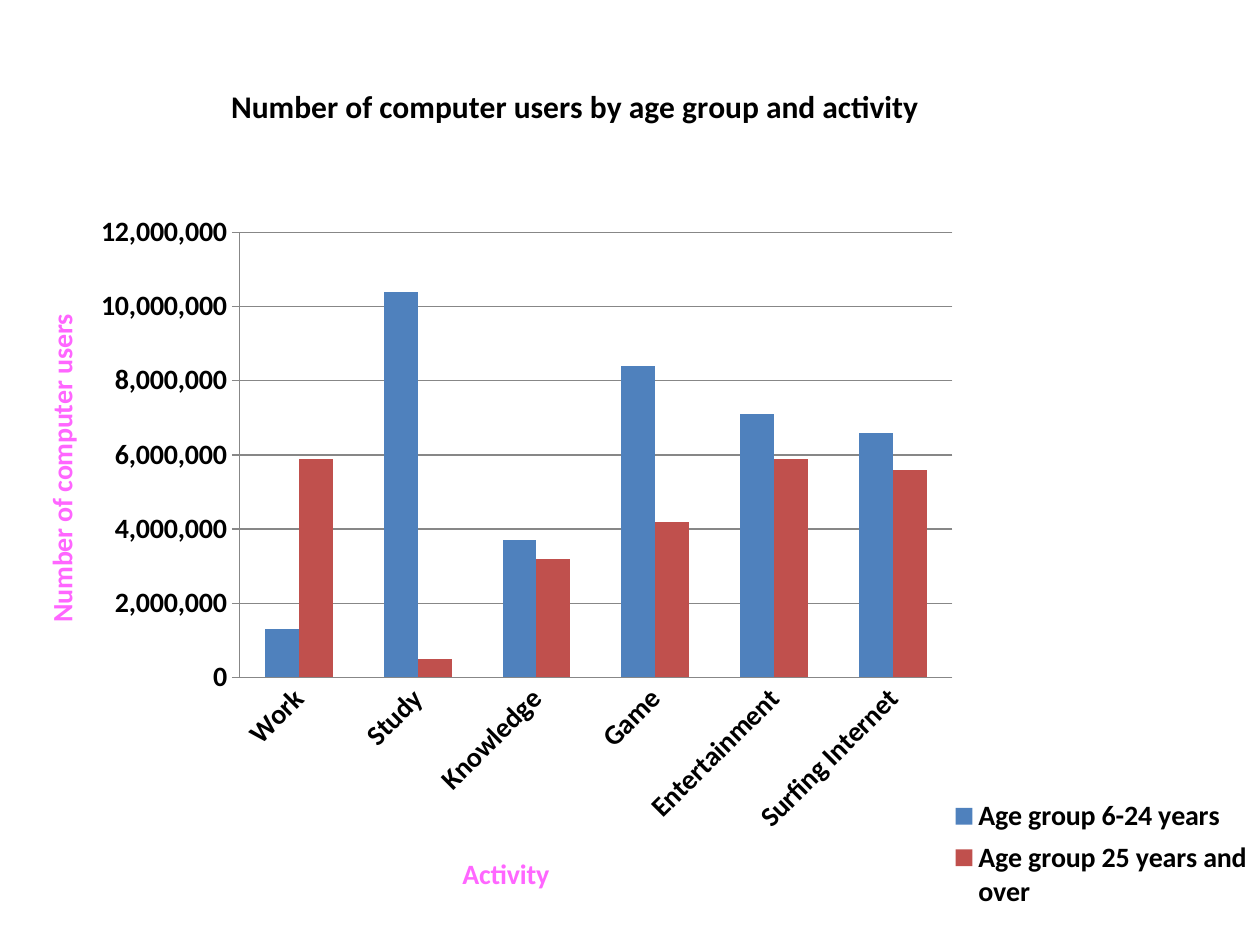
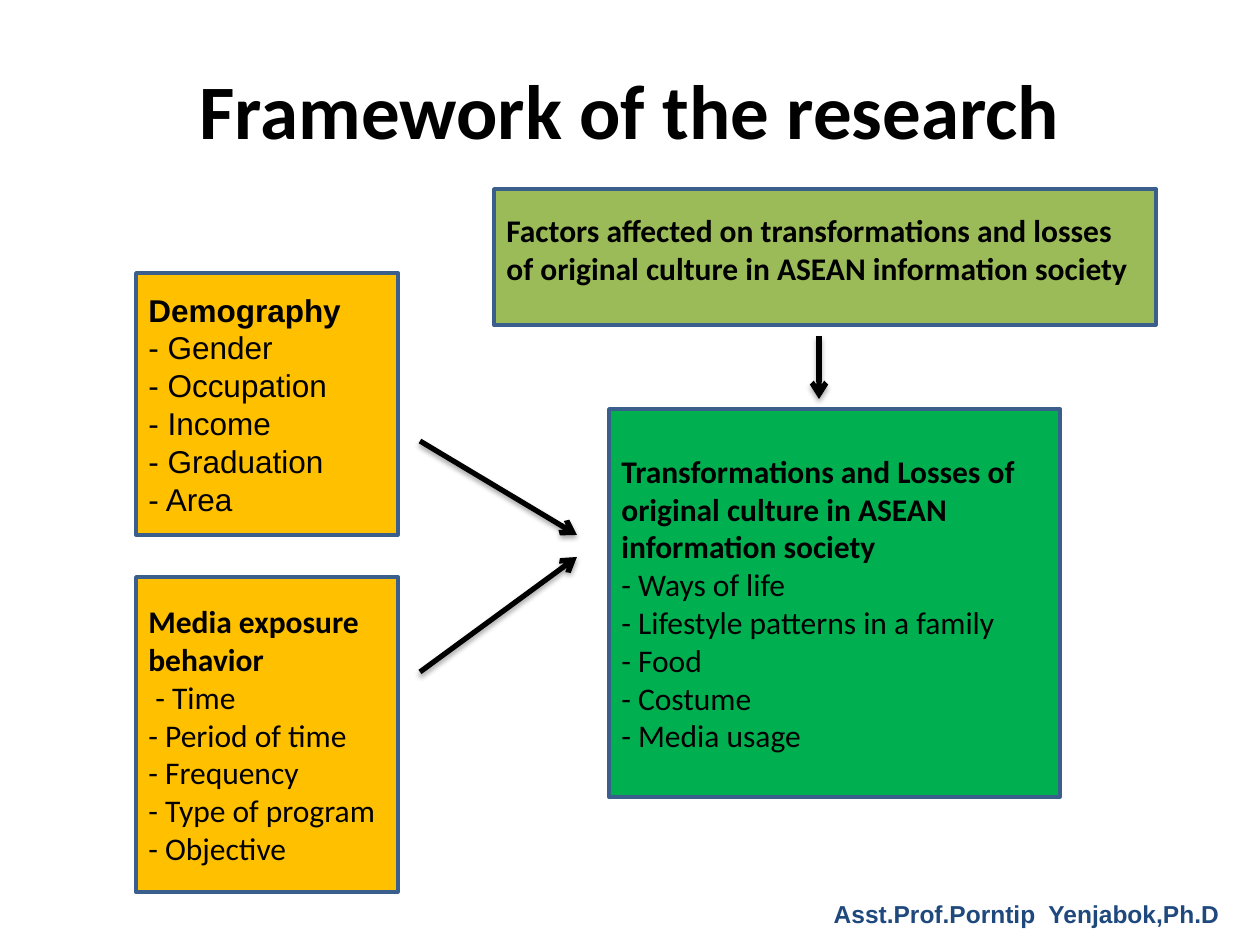
from lxml import etree
from pptx import Presentation
from pptx.chart.data import CategoryChartData
from pptx.dml.color import RGBColor
from pptx.enum.chart import XL_CHART_TYPE as ChartType, XL_LEGEND_POSITION as LegendSide
from pptx.enum.chart import XL_TICK_MARK as Tick
from pptx.enum.shapes import MSO_CONNECTOR as Connector, MSO_SHAPE as Shape
from pptx.enum.text import MSO_ANCHOR as Anchor, PP_ALIGN as Align
from pptx.oxml import parse_xml
from pptx.oxml.ns import nsdecls, qn
from pptx.util import Pt

# Shared measures, colours and text formats
PX = 914400 / 126
WIDTH, HEIGHT = 1260, 945
BLACK, PINK, GREY, NAVY = "000000", "FF66FF", "878787", "1F497D"
AMBER, GREEN, OLIVE, OUTLINE = "FFC000", "00B050", "9BBB59", "3A5F8C"
TITLE = dict(size=Pt(44), bold=True, name="Calibri", color=BLACK)
CHART_TITLE = dict(size=Pt(18), bold=True, name="Calibri", color=BLACK)
AXIS_TITLE = dict(size=Pt(16), bold=True, name="Calibri", color=PINK)
LABEL = dict(size=Pt(16), bold=True, name="Calibri", color=BLACK)
FOOTER = dict(size=Pt(14), bold=True, name="Arial", color=NAVY)

# Chart content
CHART_HEADING = "Number of computer users by age group and activity"
ACTIVITIES = ["Work", "Study", "Knowledge", "Game", "Entertainment", "Surfing Internet"]
AGE_GROUPS = [
    ("Age group 6-24 years", "4F81BD",
     [1300000, 10400000, 3700000, 8400000, 7100000, 6600000]),
    ("Age group 25 years and over", "C0504D",
     [5900000, 500000, 3200000, 4200000, 5900000, 5600000]),
]

# Framework content: place, fill, font, heading, items
FRAMEWORK = [
    ((136, 273, 262, 262), AMBER, "Arial", "Demography",
     ["Gender", "Occupation", "Income", "Graduation", "Area"]),
    ((136, 577, 262, 315), AMBER, "Calibri", "Media exposure behavior",
     ["Time", "Period of time", "Frequency", "Type of program", "Objective"]),
    ((609, 409, 451, 388), GREEN, "Calibri",
     "Transformations and Losses of original culture in ASEAN information society",
     ["Ways of life", "Lifestyle patterns in a family", "Food", "Costume", "Media usage"]),
    ((494, 189, 662, 136), OLIVE, "Calibri",
     "Factors affected on transformations and losses of original culture "
     "in ASEAN information society", []),
]
INDENTED_ITEM = "Time"
ARROWS = [(420, 441, 577, 535), (420, 672, 577, 557), (819, 336, 819, 399)]
AUTHOR = "Asst.Prof.Porntip  Yenjabok,Ph.D"


def emu(*lengths):
    return [round(length * PX) for length in lengths]


def rgb(value):
    return RGBColor.from_string(value)


def style(font, formats):
    for name, value in formats.items():
        if name == "color":
            font.color.rgb = rgb(value)
        else:
            setattr(font, name, value)


def write(para, text, formats):
    span = para.add_run()
    span.text = text
    style(span.font, formats)


def arrange(part, x, y, width=None, height=None, inner=False):
    """Give a chart part a fixed place within the chart."""
    for old in part.findall(qn("c:layout")):
        part.remove(old)
    layout = parse_xml(f"<c:layout {nsdecls('c')}><c:manualLayout/></c:layout>")
    values = [("layoutTarget", "inner")] if inner else []
    values += [("xMode", "edge"), ("yMode", "edge"),
               ("x", round(x / WIDTH, 3)), ("y", round(y / HEIGHT, 3))]
    if width:
        values += [("w", round(width / WIDTH, 3)), ("h", round(height / HEIGHT, 3))]
    for tag, value in values:
        etree.SubElement(layout[0], qn(f"c:{tag}")).set("val", str(value))
    overlay = part.find(qn("c:overlay"))
    if overlay is None:
        part.insert(0, layout)
    else:
        overlay.addprevious(layout)


def title_part(owner, title, text, formats, x, y):
    write(title.text_frame.paragraphs[0], text, formats)
    arrange(title._element, x, y)


def add_usage_chart(page):
    data = CategoryChartData(number_format="#,##0")
    data.categories = ACTIVITIES
    for name, _, values in AGE_GROUPS:
        data.add_series(name, values)
    chart = page.shapes.add_chart(
        ChartType.COLUMN_CLUSTERED, *emu(0, 0, WIDTH, HEIGHT), data).chart
    style(chart.font, LABEL)

    # Columns
    plot = chart.plots[0]
    plot.gap_width, plot.overlap, plot.vary_by_categories = 150, 0, False
    for series, (_, color, _) in zip(plot.series, AGE_GROUPS):
        series.format.fill.solid()
        series.format.fill.fore_color.rgb = rgb(color)
    arrange(chart._chartSpace.chart.plotArea, 239, 232, 713, 445, inner=True)

    # Axes
    across, up = chart.category_axis, chart.value_axis
    up.minimum_scale, up.maximum_scale, up.major_unit = 0, 12000000, 2000000
    up.has_major_gridlines = True
    for axis, tick in ((across, Tick.NONE), (up, Tick.CROSS)):
        axis.major_tick_mark, axis.minor_tick_mark = tick, Tick.NONE
        style(axis.tick_labels.font, LABEL)
    up.tick_labels.number_format = "#,##0"
    up.tick_labels.number_format_is_linked = False
    for line in (across.format.line, up.format.line, up.major_gridlines.format.line):
        line.color.rgb, line.width = rgb(GREY), Pt(0.75)
    slanted = across._element.find(qn("c:txPr")).find(qn("a:bodyPr"))
    slanted.set("rot", "-2700000")

    # Titles and legend
    chart.has_title = True
    title_part(chart, chart.chart_title, CHART_HEADING, CHART_TITLE, 225, 78)
    title_part(across, across.axis_title, "Activity", AXIS_TITLE, 457, 850)
    title_part(up, up.axis_title, "Number of computer users", AXIS_TITLE, 38, 309)
    upright = up.axis_title.text_frame._txBody.find(qn("a:bodyPr"))
    upright.set("rot", "-5400000")
    upright.set("vert", "horz")
    chart.has_legend = True
    legend = chart.legend
    legend.position, legend.include_in_layout = LegendSide.RIGHT, False
    style(legend.font, LABEL)
    arrange(legend._element, 951, 792, 305, 125)


def add_box(page, place, color, font, heading, items):
    box = page.shapes.add_shape(Shape.RECTANGLE, *emu(*place))
    box.shadow.inherit = False
    box.fill.solid()
    box.fill.fore_color.rgb = rgb(color)
    box.line.color.rgb, box.line.width = rgb(OUTLINE), Pt(2)
    frame = box.text_frame
    frame.word_wrap, frame.vertical_anchor = True, Anchor.MIDDLE
    if not items:
        frame.margin_bottom = emu(22)[0]
    for index, text in enumerate([heading] + items):
        para = frame.add_paragraph() if index else frame.paragraphs[0]
        para.alignment = Align.LEFT
        if text == INDENTED_ITEM:
            para._p.get_or_add_pPr().set("marL", str(emu(7)[0]))
        write(para, f"- {text}" if index else text,
              dict(size=Pt(18), bold=index == 0, name=font, color=BLACK))


def add_arrow(page, ends):
    arrow = page.shapes.add_connector(Connector.STRAIGHT, *emu(*ends))
    arrow.line.color.rgb, arrow.line.width = rgb(BLACK), Pt(3)
    etree.SubElement(arrow.line._get_or_add_ln(), qn("a:tailEnd")).set("type", "arrow")
    arrow._element.spPr.append(parse_xml(
        f"<a:effectLst {nsdecls('a')}>"
        f'<a:outerShdw blurRad="{Pt(3.1)}" dist="{Pt(1.8)}" dir="5400000" rotWithShape="0">'
        f'<a:srgbClr val="{BLACK}"><a:alpha val="35000"/></a:srgbClr>'
        "</a:outerShdw></a:effectLst>"))


def add_framework(page):
    title = page.shapes.title
    title.left, title.top, title.width, title.height = emu(63, 38, 1134, 141)
    title.text_frame.vertical_anchor = Anchor.MIDDLE
    para = title.text_frame.paragraphs[0]
    para.alignment = Align.CENTER
    write(para, "Framework of the research", TITLE)
    for box in FRAMEWORK:
        add_box(page, *box)
    for ends in ARROWS:
        add_arrow(page, ends)
    footer = page.shapes.add_textbox(*emu(819, 893, 413, 50)).text_frame
    footer.word_wrap = False
    footer.paragraphs[0].alignment = Align.RIGHT
    write(footer.paragraphs[0], AUTHOR, FOOTER)


def main():
    deck = Presentation()
    deck.slide_width, deck.slide_height = emu(WIDTH, HEIGHT)
    blank, title_only = deck.slide_layouts[6], deck.slide_layouts[5]
    add_usage_chart(deck.slides.add_slide(blank))
    add_framework(deck.slides.add_slide(title_only))
    deck.save("out.pptx")


if __name__ == "__main__":
    main()
